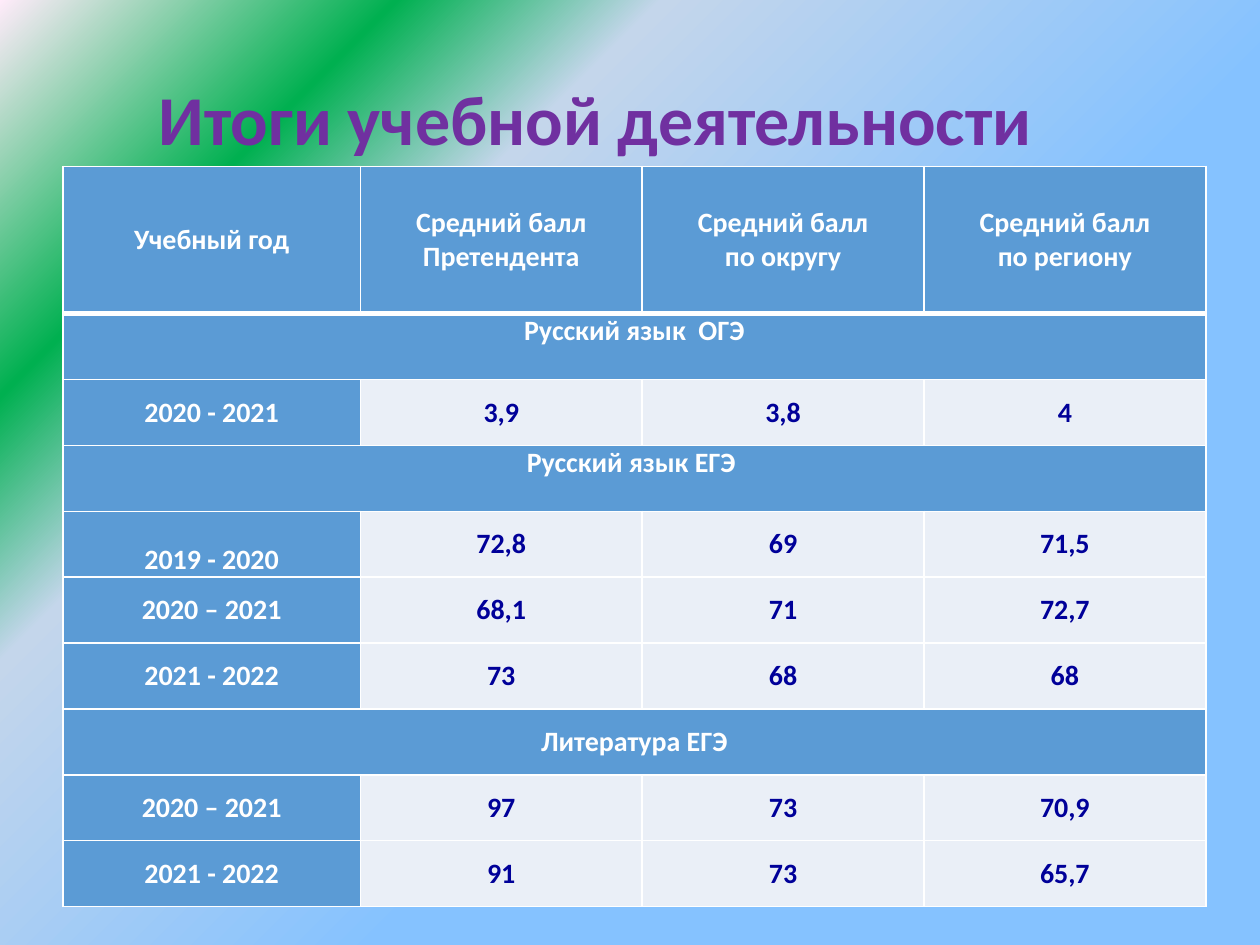
from pptx import Presentation, util as u
from pptx.dml.color import RGBColor
from pptx.enum import text as t
from pptx.oxml import parse_xml
from pptx.oxml.ns import nsdecls

BLUE, PALE, NAVY, WHITE, PURPLE = "5B9BD5", "EAEFF7", "000099", "FFFFFF", "7030A0"


def color(target, value):
    target.rgb = RGBColor.from_string(value)


def write(frame, content, size=16, ink=WHITE, align=t.PP_ALIGN.CENTER):
    frame.word_wrap = True
    runs = []
    for number, line in enumerate(content.split("\n")):
        paragraph = frame.add_paragraph() if number else frame.paragraphs[0]
        paragraph.alignment = align
        run = paragraph.add_run()
        run.text = line
        run.font.name, run.font.size, run.font.bold = "Calibri", u.Pt(size), True
        color(run.font.color, ink)
        runs.append(run)
    return runs


deck = Presentation()
deck.slide_width, deck.slide_height = u.Inches(10), u.Inches(7.5)
W, H = deck.slide_width, deck.slide_height
slide = deck.slides.add_slide(deck.slide_layouts[6])

stops = "".join(
    f'<a:gs pos="{share * 1000}"><a:srgbClr val="{value}"/></a:gs>'
    for share, value in [(40, "85C2FF"), (70, "C4D6EB"), (82, "00B050"), (100, "FFEBFA")])
slide.element.cSld.insert(0, parse_xml(
    f'<p:bg {nsdecls("p", "a")}><p:bgPr><a:gradFill rotWithShape="1"><a:gsLst>{stops}</a:gsLst>'
    '<a:path path="circle"><a:fillToRect l="100000" t="100000"/></a:path></a:gradFill>'
    '<a:effectLst/></p:bgPr></p:bg>'))

heading = slide.shapes.add_textbox(int(W * 0.067), int(H * 0.073), int(W * 0.89), int(H * 0.103))
heading.text_frame.auto_size = t.MSO_AUTO_SIZE.SHAPE_TO_FIT_TEXT
heading_run = write(heading.text_frame, "Итоги учебной деятельности", size=40, ink=PURPLE,
                    align=t.PP_ALIGN.JUSTIFY)[0]
heading_format = heading.text_frame.paragraphs[0]._p.get_or_add_pPr()
heading_format.set("marL", "0")
heading_format.set("indent", str(u.Inches(0.49)))
heading_run.font._element.insert(0, parse_xml(
    f'<a:ln {nsdecls("a")} w="{u.Pt(2.48)}"><a:solidFill><a:srgbClr val="7DB8FF"/></a:solidFill></a:ln>'))

results = [
    ["Учебный год", "Средний балл\nПретендента", "Средний балл\nпо округу", "Средний балл\nпо региону"],
    ["Русский язык  ОГЭ"],
    ["2020 - 2021", "3,9", "3,8", "4"],
    ["Русский язык ЕГЭ "],
    ["2019 - 2020", "72,8", "69", "71,5"],
    ["2020 – 2021", "68,1", "71", "72,7"],
    ["2021 - 2022", "73", "68", "68"],
    ["Литература ЕГЭ"],
    ["2020 – 2021", "97", "73", "70,9"],
    ["2021 - 2022", "91", "73", "65,7"],
]
anchors = {(1, 0): t.MSO_ANCHOR.TOP, (3, 0): t.MSO_ANCHOR.TOP, (4, 0): t.MSO_ANCHOR.BOTTOM}

scores = slide.shapes.add_table(len(results), 4, int(W * 0.05), int(H * 0.176),
                                int(W * 0.907), int(H * 0.784)).table
scores.horz_banding = False
for column, share in zip(scores.columns, [0.236] + [0.2237] * 3):
    column.width = int(W * share)
for row, inches in zip(scores.rows, [1.17] + [0.523] * 9):
    row.height = u.Inches(inches)

for r, entries in enumerate(results):
    if len(entries) == 1:
        scores.cell(r, 0).merge(scores.cell(r, 3))
    for c in range(4):
        cell = scores.cell(r, c)
        is_score = r > 0 and c > 0 and len(entries) > 1
        cell.margin_left = cell.margin_right = u.Inches(0.07)
        cell.margin_top = cell.margin_bottom = 0
        cell.vertical_anchor = anchors.get((r, c), t.MSO_ANCHOR.MIDDLE)
        cell.fill.solid()
        color(cell.fill.fore_color, PALE if is_score else BLUE)
        for place, side in enumerate("LRTB"):
            thick = (r, side) in [(0, "B"), (1, "T")]
            cell._tc.get_or_add_tcPr().insert(place, parse_xml(
                f'<a:ln{side} {nsdecls("a")} w="{u.Pt(3 if thick else 1)}">'
                f'<a:solidFill><a:srgbClr val="{WHITE}"/></a:solidFill></a:ln{side}>'))
        if c < len(entries):
            write(cell.text_frame, entries[c], ink=NAVY if is_score else WHITE)

deck.save("out.pptx")
